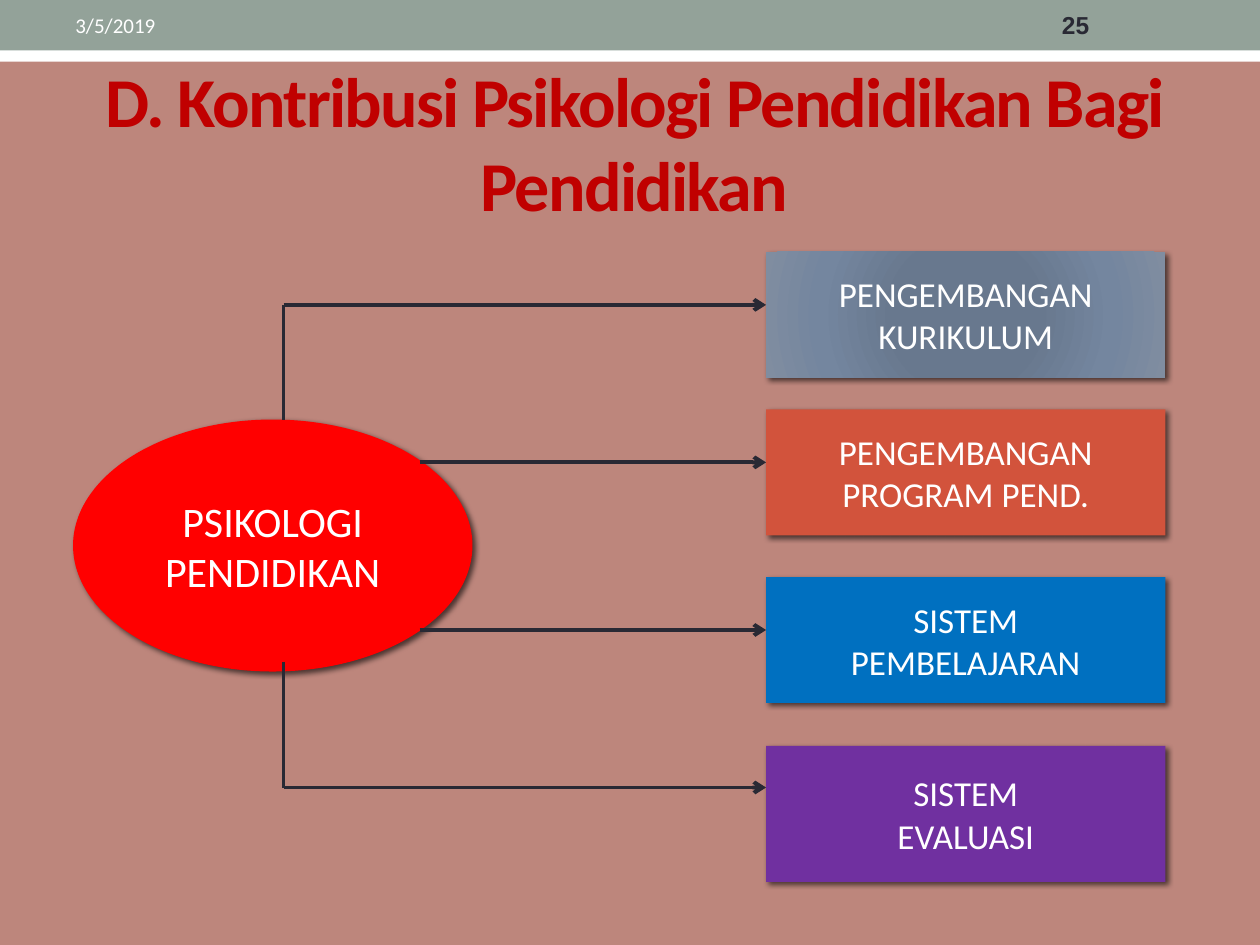
from lxml import etree
from pptx import Presentation
from pptx.dml.color import RGBColor
from pptx.enum.shapes import MSO_CONNECTOR, MSO_SHAPE
from pptx.enum.text import MSO_ANCHOR, MSO_AUTO_SIZE, PP_ALIGN
from pptx.oxml.ns import qn
from pptx.util import Inches, Pt

RECT, OVAL = MSO_SHAPE.RECTANGLE, MSO_SHAPE.OVAL
LINE = MSO_CONNECTOR.STRAIGHT
LEFT, CENTER = PP_ALIGN.LEFT, PP_ALIGN.CENTER
MIDDLE = MSO_ANCHOR.MIDDLE
NOFIT = MSO_AUTO_SIZE.NONE
TITLE_ONLY = 5

ROSE, SAGE, WHITE = "BD867C", "93A299", "FFFFFF"
INK, CRIMSON, RED = "292934", "C00000", "FF0000"
SLATE = [(0, "677790"), (34, "68788E"), (70, "74869F"), (100, "808DA0")]


def color(code):
    return RGBColor.from_string(code)


def add(parent, tag, **attrs):
    """Append a drawing element whose attribute values become strings."""
    pairs = {key: str(val) for key, val in attrs.items()}
    return etree.SubElement(parent, qn(tag), pairs)


class Painter:
    font = "Calibri"

    def __init__(self, slide):
        self.slide = slide

    def words(self, frame, lines, size, code, align=LEFT, bold=False, font=None):
        frame.vertical_anchor = MIDDLE
        frame.auto_size = NOFIT
        for i, line in enumerate(lines):
            para = frame.add_paragraph() if i else frame.paragraphs[0]
            para.alignment = align
            run = para.add_run()
            run.text = line
            run.font.name = font or self.font
            run.font.size = Pt(size)
            run.font.bold = bold
            run.font.color.rgb = color(code)

    def title(self, text, x, y, w, h):
        head = self.slide.shapes.title
        head.left, head.top = Inches(x), Inches(y)
        head.width, head.height = Inches(w), Inches(h)
        head.text_frame.word_wrap = True
        self.words(head.text_frame, [text], 40, CRIMSON, CENTER, True)
        # Tighten the letters by one point
        for props in head.element.iter(qn("a:rPr")):
            props.set("spc", "-100")

    def label(self, text, x, y, w, h, size, code, **style):
        box = self.slide.shapes.add_textbox(
            Inches(x), Inches(y), Inches(w), Inches(h))
        box.text_frame.word_wrap = True
        self.words(box.text_frame, [text], size, code, **style)

    def shape(self, kind, x, y, w, h, fill):
        item = self.slide.shapes.add_shape(
            kind, Inches(x), Inches(y), Inches(w), Inches(h))
        item.shadow.inherit = False
        item.line.fill.background()
        item.fill.solid()
        if isinstance(fill, list):
            self.blend(item, fill)
        else:
            item.fill.fore_color.rgb = color(fill)
        return item

    def blend(self, item, stops):
        props = item.element.spPr
        grad = etree.Element(qn("a:gradFill"), rotWithShape="1")
        group = add(grad, "a:gsLst")
        for pos, code in stops:
            stop = add(group, "a:gs", pos=pos * 1000)
            add(stop, "a:srgbClr", val=code)
        ring = add(grad, "a:path", path="circle")
        add(ring, "a:fillToRect", l=100000, t=100000, r=100000, b=100000)
        props.replace(props.find(qn("a:solidFill")), grad)

    def node(self, kind, x, y, w, h, fill, lines, size):
        item = self.shape(kind, x, y, w, h, fill)
        item.text_frame.word_wrap = False
        self.words(item.text_frame, lines, size, WHITE, CENTER)
        # Soft shadow towards the lower right
        effect = item.element.spPr.find(qn("a:effectLst"))
        shade = add(effect, "a:outerShdw", blurRad=int(Pt(3)), dist=int(Pt(2)),
                    dir=45 * 60000, algn="tl", rotWithShape=0)
        tint = add(shade, "a:srgbClr", val="000000")
        add(tint, "a:alpha", val=60000)

    def line(self, x1, y1, x2, y2, arrow=False):
        link = self.slide.shapes.add_connector(
            LINE, Inches(x1), Inches(y1), Inches(x2), Inches(y2))
        link.line.width = Pt(2.25)
        link.line.color.rgb = color(INK)
        props = link.element.spPr
        if arrow:
            add(props.find(qn("a:ln")), "a:tailEnd", type="arrow")
        add(props, "a:effectLst")


def main():
    deck = Presentation()
    deck.slide_width, deck.slide_height = Inches(10), Inches(7.5)
    slide = deck.slides.add_slide(deck.slide_layouts[TITLE_ONLY])
    slide.background.fill.solid()
    slide.background.fill.fore_color.rgb = color(ROSE)
    art = Painter(slide)

    # Top bands, date and page number
    art.shape(RECT, 0, 0.24, 10, 0.25, WHITE)
    art.shape(RECT, 0, 0, 10, 0.4, SAGE)
    art.label("3/5/2019", 0.5, 0.02, 3.17, 0.36, 12, WHITE)
    art.label("25", 8.33, 0.02, 1.17, 0.36, 14, INK, bold=True, font="Arial")

    art.title("D. Kontribusi Psikologi Pendidikan Bagi Pendidikan",
              0.58, 0.5, 8.91, 1.25)

    # Source and the four fields it serves
    wide, edge, stem = 3.17, 6.08, 2.25
    art.node(OVAL, 0.58, 3.33, wide, 2, RED, ["PSIKOLOGI", "PENDIDIKAN"], 24)
    fields = [
        (2, 1, SLATE, ["PENGEMBANGAN", "KURIKULUM"]),
        (3.25, 1, "D2533C", ["PENGEMBANGAN", "PROGRAM PEND."]),
        (4.58, 1, "0070C0", ["SISTEM", "PEMBELAJARAN"]),
        (5.92, 1.08, "7030A0", ["SISTEM", "EVALUASI"]),
    ]
    for top, tall, fill, lines in fields:
        art.node(RECT, edge, top, wide, tall, fill, lines, 20)

    # Stems above and below the oval, then one arrow to each field
    art.line(stem, 3.33, stem, 2.42)
    art.line(stem, 5.25, stem, 6.25)
    for start, y in [(stem, 2.42), (3.33, 3.67), (3.33, 5), (stem, 6.25)]:
        art.line(start, y, edge, y, arrow=True)

    deck.save("out.pptx")


if __name__ == "__main__":
    main()
